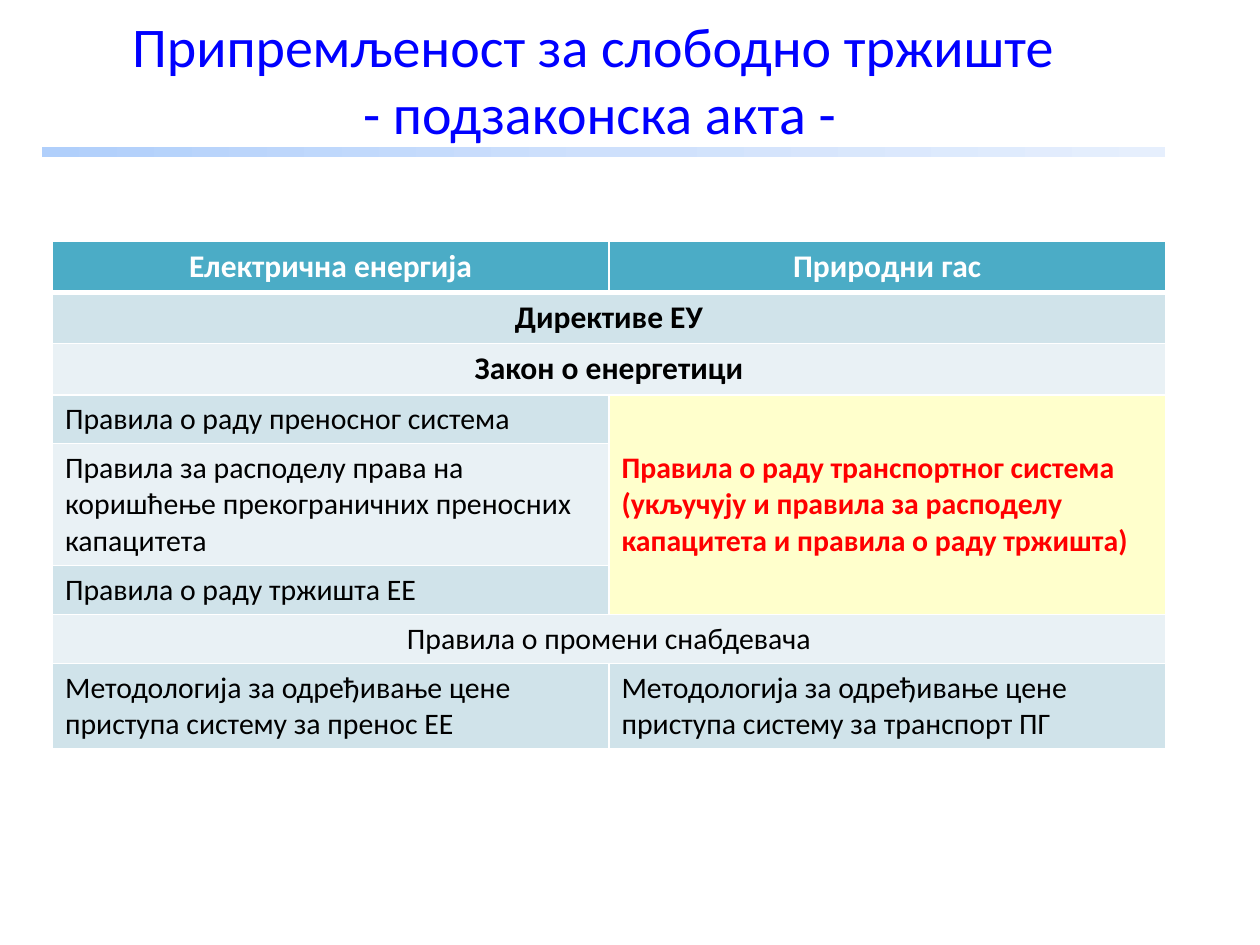
from copy import deepcopy
from dataclasses import dataclass

from lxml.etree import SubElement
from pptx import Presentation
from pptx.dml.color import RGBColor as RGB
from pptx.enum.shapes import MSO_SHAPE as SHAPE
from pptx.enum.text import MSO_ANCHOR as ANCHOR, PP_ALIGN as ALIGN
from pptx.oxml.ns import qn
from pptx.util import Pt


@dataclass(frozen=True)
class Theme:
    font: str = "Calibri"
    title_size: int = 32
    head_size: int = 18
    body_size: int = 17
    title: str = "0000FF"
    head: str = "4BACC6"
    bands: tuple = ("D0E3EA", "E9F1F5")
    note: str = "FFFFCC"
    alert: str = "FF0000"
    text: str = "000000"
    white: str = "FFFFFF"
    rule: tuple = ("B0CFFB", "CEE0FC", "E6EFFD")


T = Theme()

# Each row: height, kind, texts; a single text in a "wide" row spans both columns
ROWS = [
    (29.2, "head", ["Електрична енергија", "Природни гас"]),
    (29.2, "law", ["Директиве ЕУ"]),
    (29.2, "law", ["Закон о енергетици"]),
    (28, "rule", ["Правила о раду преносног система",
                  "Правила о раду транспортног система (укључују и правила "
                  "за расподелу капацитета и правила о раду тржишта)"]),
    (69.6, "rule", ["Правила за расподелу права на коришћење "
                    "прекограничних преносних капацитета"]),
    (28, "rule", ["Правила о раду тржишта ЕЕ"]),
    (28, "wide", ["Правила о промени снабдевача"]),
    (48.6, "rule", ["Методологија за одређивање цене приступа систему за пренос ЕЕ",
                    "Методологија за одређивање цене приступа систему за транспорт ПГ"]),
]
NOTE_ROWS = (3, 5)  # rows joined in the gas column


def style(p, size, color, bold=False, align=ALIGN.LEFT):
    p.alignment = align
    p.font.name, p.font.size, p.font.bold = T.font, Pt(size), bold
    p.font.color.rgb = RGB.from_string(color)


def add_title(s, x, y, w, h):
    tf = s.shapes.add_textbox(Pt(x), Pt(y), Pt(w), Pt(h)).text_frame
    tf.word_wrap = True
    tf.vertical_anchor = ANCHOR.MIDDLE
    p = tf.paragraphs[0]
    p.text = "Припремљеност за слободно тржиште \v- подзаконска акта -"
    style(p, T.title_size, T.title, align=ALIGN.CENTER)


def add_rule(s, x, y, w, h):
    sp = s.shapes.add_shape(SHAPE.RECTANGLE, Pt(x), Pt(y), Pt(w), Pt(h))
    sp.shadow.inherit = False
    sp.line.fill.background()
    sp.fill.gradient()
    sp.fill.gradient_angle = 0
    # Add a middle stop to the two default ones
    stops = sp._element.spPr.find(".//" + qn("a:gsLst"))
    stops.insert(1, deepcopy(stops[0]))
    for stop, pos, color in zip(sp.fill.gradient_stops, (0, 0.5, 1), T.rule):
        stop.position = pos
        stop.color.rgb = RGB.from_string(color)


def set_borders(cell, bottom=1, top=1):
    tcPr = cell._tc.get_or_add_tcPr()
    for side, width in (("L", 1), ("R", 1), ("T", top), ("B", bottom)):
        ln = SubElement(tcPr, qn(f"a:ln{side}"), w=str(Pt(width)))
        fill = SubElement(ln, qn("a:solidFill"))
        SubElement(fill, qn("a:srgbClr"), val=T.white)


def fill_cell(cell, text, kind, note=False):
    p = cell.text_frame.paragraphs[0]
    p.text = text
    if kind in ("head", "law"):
        style(p, T.head_size, T.white if kind == "head" else T.text, True, ALIGN.CENTER)
    else:
        cell.vertical_anchor = ANCHOR.MIDDLE
        style(p, T.body_size, T.alert if note else T.text, note,
              ALIGN.CENTER if kind == "wide" else ALIGN.LEFT)


def add_rules_table(s, x, y, w):
    height = sum(row[0] for row in ROWS)
    table = s.shapes.add_table(len(ROWS), 2, Pt(x), Pt(y), Pt(w), Pt(height)).table
    for col in table.columns:
        col.width = Pt(w / 2)
    first, last = NOTE_ROWS
    for i, (h, kind, texts) in enumerate(ROWS):
        table.rows[i].height = Pt(h)
        # Borders and banded fills
        for j in range(2):
            cell = table.cell(i, j)
            note = j == 1 and first <= i <= last
            set_borders(cell, bottom=3 if i == 0 else 1, top=3 if i == 1 else 1)
            color = T.head if i == 0 else T.note if note else T.bands[(i - 1) % 2]
            cell.fill.solid()
            cell.fill.fore_color.rgb = RGB.from_string(color)
            if j < len(texts):
                fill_cell(cell, texts[j], kind, note)
        if kind in ("law", "wide"):
            table.cell(i, 0).merge(table.cell(i, 1))
    table.cell(first, 1).merge(table.cell(last, 1))


def main():
    prs = Presentation()
    prs.slide_width, prs.slide_height = Pt(720), Pt(540)
    s = prs.slides.add_slide(prs.slide_layouts[6])
    add_title(s, 36, 12, 613.5, 66)
    add_rule(s, 24, 84, 642, 6)
    add_rules_table(s, 30, 138, 636)
    prs.save("out.pptx")


if __name__ == "__main__":
    main()
